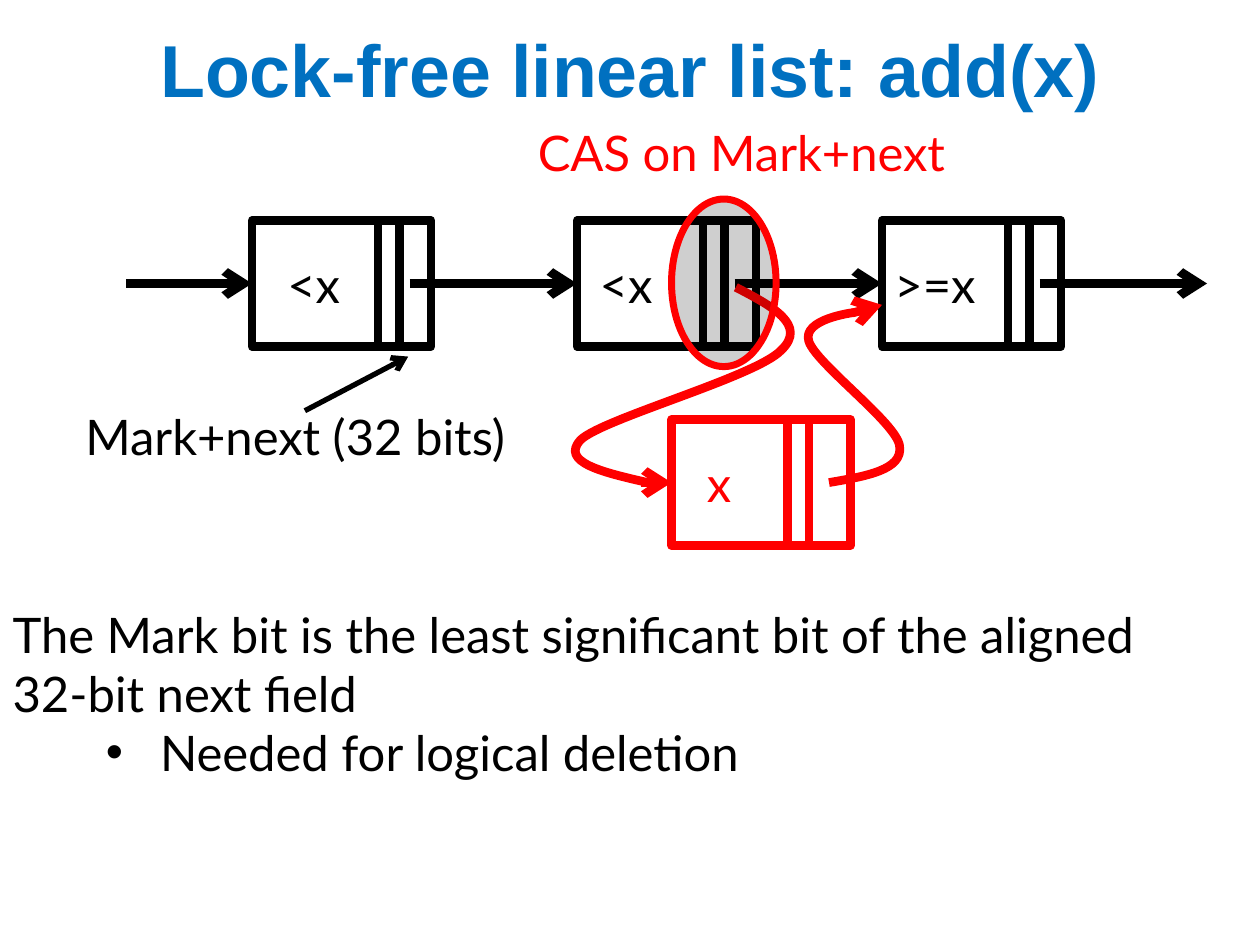
import pptx
import pptx.dml.color
import pptx.enum.shapes
import pptx.enum.text
import pptx.oxml
import pptx.oxml.ns
import pptx.util
from lxml import etree

Inches = pptx.util.Inches
Pt = pptx.util.Pt
qn = pptx.oxml.ns.qn
ANCHOR = pptx.enum.text.MSO_ANCHOR
ALIGN = pptx.enum.text.PP_ALIGN
SHAPE = pptx.enum.shapes.MSO_SHAPE
BLACK, RED, BLUE = "000000", "FF0000", "0070C0"


def color(hex_value):
    return pptx.dml.color.RGBColor.from_string(hex_value)


class ListSlide:
    font = "Lato"
    size = 28
    stroke = 5
    node_width, node_height = 1.42, 1

    def __init__(self, slide):
        self.slide = slide
        self.shapes = slide.shapes

    def place(self, shape, left, top, width, height):
        shape.left, shape.top = Inches(left), Inches(top)
        shape.width, shape.height = Inches(width), Inches(height)

    def style_text(self, paragraph, ink, font=None, size=None, bold=False):
        for run in paragraph.runs:
            run.font.name = font or self.font
            run.font.size = Pt(size or self.size)
            run.font.bold = bold
            run.font.color.rgb = color(ink)

    def style_line(self, shape, ink, width, arrow=False):
        shape.line.color.rgb = color(ink)
        shape.line.width = Pt(width)
        outline = shape.line._get_or_add_ln()
        etree.SubElement(outline, qn("a:round"))
        if arrow:
            etree.SubElement(outline, qn("a:tailEnd"), type="arrow")

    def title(self, text):
        heading = self.shapes.title
        self.place(heading, 0, 0, 10, 1.08)
        heading.text_frame.text = text
        heading.text_frame.vertical_anchor = ANCHOR.MIDDLE
        paragraph = heading.text_frame.paragraphs[0]
        paragraph.alignment = ALIGN.CENTER
        self.style_text(paragraph, BLUE, "Arial", 42, True)

    def body(self, lines):
        notes = self.slide.placeholders[1]
        self.place(notes, 0, 4.75, 10, 1.51)
        frame = notes.text_frame
        frame.auto_size = pptx.enum.text.MSO_AUTO_SIZE.NONE
        frame.text = "\n".join(text for text, _ in lines)
        for paragraph, (_, level) in zip(frame.paragraphs, lines):
            paragraph.level = level
            paragraph.line_spacing = 1.0
            paragraph.space_before = Pt(0)
            properties = paragraph._p.get_or_add_pPr()
            properties.set("marL", str(Inches(1.17 if level else 0)))
            properties.set("indent", str(Inches(-0.43 if level else 0)))
            if level:
                etree.SubElement(properties, qn("a:buFont"), typeface="Arial")
                etree.SubElement(properties, qn("a:buChar"), char="•")
            else:
                etree.SubElement(properties, qn("a:buNone"))
            self.style_text(paragraph, BLACK)

    def label(self, text, left, top, width, ink):
        box = self.shapes.add_textbox(Inches(left), Inches(top), Inches(width), Inches(0.57))
        box.text_frame.word_wrap = False
        box.text_frame.text = text
        self.style_text(box.text_frame.paragraphs[0], ink)

    def outline(self, kind, left, top, width, height, ink, stroke):
        shape = self.shapes.add_shape(kind, Inches(left), Inches(top), Inches(width), Inches(height))
        shape.shadow.inherit = False
        shape.fill.background()
        self.style_line(shape, ink, stroke)
        return shape

    def node(self, key, left, top, inset, ink, dividers):
        cell = self.outline(SHAPE.RECTANGLE, left, top, self.node_width, self.node_height, ink, self.stroke)
        frame = cell.text_frame
        frame.text = key
        frame.margin_left = Inches(inset)
        frame.vertical_anchor = ANCHOR.MIDDLE
        frame.paragraphs[0].alignment = ALIGN.LEFT
        self.style_text(frame.paragraphs[0], ink)
        for offset in dividers:
            x = left + offset
            self.line((x, top), (x, top + self.node_height), ink)
        return cell

    def line(self, start, end, ink, stroke=None, arrow=False, target=None):
        link = self.shapes.add_connector(
            pptx.enum.shapes.MSO_CONNECTOR.STRAIGHT, *map(Inches, start + end))
        self.style_line(link, ink, stroke or self.stroke, arrow)
        etree.SubElement(link._element.spPr, qn("a:effectLst"))
        if target is not None:
            link.end_connect(target, 1)

    def curve(self, points, ink):
        start, *controls = [tuple(map(Inches, point)) for point in points]
        builder = self.shapes.build_freeform(*start)
        builder.add_line_segments(controls, close=False)
        pointer = builder.convert_to_shape()
        pointer.shadow.inherit = False
        pointer.fill.background()
        self.style_line(pointer, ink, self.stroke)
        segments = list(pointer._element.iter(qn("a:lnTo")))
        for first in range(0, len(segments), 3):
            bezier = etree.Element(qn("a:cubicBezTo"))
            segments[first].addprevious(bezier)
            for segment in segments[first:first + 3]:
                bezier.append(segment[0])
                segment.getparent().remove(segment)

    def highlight(self, left, top, width, height):
        halo = self.outline(SHAPE.OVAL, left, top, width, height, RED, 4)
        halo.fill.solid()
        halo.fill.fore_color.rgb = color(BLACK)
        tint = halo._element.spPr.find(qn("a:solidFill"))[0]
        etree.SubElement(tint, qn("a:alpha"), val="19000")


def main():
    deck = pptx.Presentation()
    deck.slide_width, deck.slide_height = Inches(10), Inches(7.5)
    page = ListSlide(deck.slides.add_slide(deck.slide_layouts[1]))
    page.title("Lock-free linear list: add(x)")
    page.body([
        ("The Mark bit is the least significant bit of the aligned", 0),
        ("32-bit next field", 0),
        ("Needed for logical deletion", 1),
    ])

    list_top, list_middle = 1.75, 2.25
    arrow_start = 1
    for key, left, inset in [("<x", 2, 0.28), ("<x", 4.58, 0.18), (">=x", 7, 0.1)]:
        list_node = page.node(key, left, list_top, inset, BLACK, (1, 1.17))
        page.line((arrow_start, list_middle), (left, list_middle), BLACK, arrow=True, target=list_node)
        arrow_start = left + 1.25
    page.line((arrow_start, list_middle), (9.58, list_middle), BLACK, arrow=True)

    new_node = page.node("x", 5.33, 3.33, 0.28, RED, (0.92, 1.09))
    page.curve([(6.58, 3.83), (6.87, 3.78), (7.17, 3.73), (7.14, 3.54),
                (7.12, 3.36), (6.48, 2.89), (6.42, 2.71),
                (6.36, 2.53), (6.78, 2.48), (6.78, 2.48)], RED)
    page.line((6.78, 2.48), (7, 2.42), RED, arrow=True)
    page.curve([(5.84, 2.28), (6.13, 2.43), (6.41, 2.58), (6.2, 2.78),
                (6, 2.99), (4.79, 3.32), (4.61, 3.49),
                (4.44, 3.67), (4.79, 3.75), (5.14, 3.83)], RED)
    page.line((5.14, 3.83), (5.33, 3.83), RED, arrow=True, target=new_node)

    page.label("Mark+next (32 bits)", 0.58, 3.18, 3.68, BLACK)
    page.line((2.42, 3.26), (3.24, 2.83), BLACK, stroke=3, arrow=True)
    page.label("CAS on Mark+next", 4.17, 0.92, 3.46, RED)
    page.highlight(5.33, 1.58, 0.83, 1.33)
    deck.save("out.pptx")


if __name__ == "__main__":
    main()
